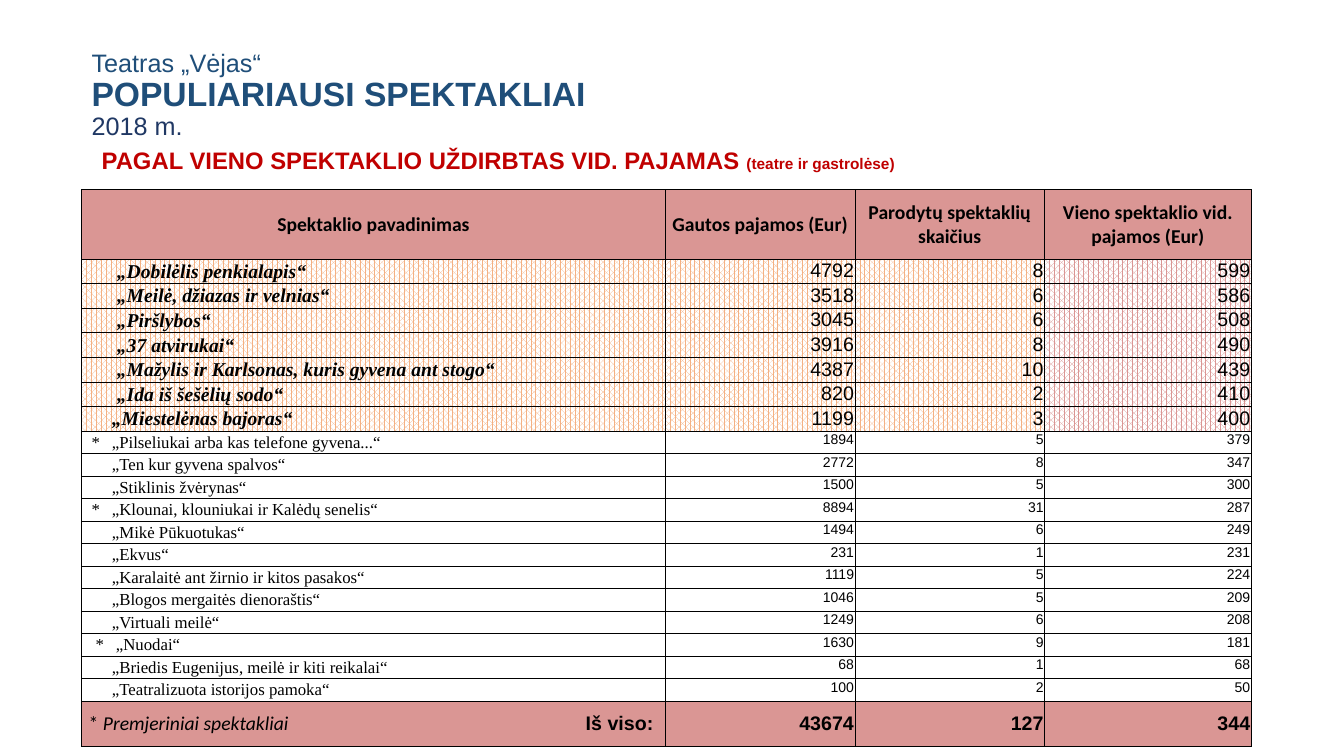
import pptx
import pptx.dml.color
import pptx.enum.dml
import pptx.enum.text
import pptx.oxml
import pptx.oxml.ns
import pptx.util

COLS, ROWS = 1333, 750  # slide grid
UNIT = pptx.util.Inches(0.01)
HUES = {"blue": "1F4E79", "navy": "203864", "red": "C00000", "black": "000000",
        "white": "FFFFFF", "rose": "DA9694", "peach": "F4B183"}
ALIGN = pptx.enum.text.PP_ALIGN
ANCHOR = pptx.enum.text.MSO_ANCHOR

HEADS = ["Spektaklio pavadinimas", "Gautos pajamos (Eur)",
         "Parodytų spektaklių skaičius", "Vieno spektaklio vid. pajamos (Eur)"]
# name, income, shows, income per show
TOP = [
    ("„Dobilėlis penkialapis“", 4792, 8, 599),
    ("„Meilė, džiazas ir velnias“", 3518, 6, 586),
    ("„Piršlybos“", 3045, 6, 508),
    ("„37 atvirukai“", 3916, 8, 490),
    ("„Mažylis ir Karlsonas, kuris gyvena ant stogo“", 4387, 10, 439),
    ("„Ida iš šešėlių sodo“", 820, 2, 410),
    ("„Miestelėnas bajoras“", 1199, 3, 400),
]
REST = [
    ("*\t„Pilseliukai arba kas telefone gyvena...“", 1894, 5, 379),
    ("„Ten kur gyvena spalvos“", 2772, 8, 347),
    ("„Stiklinis žvėrynas“", 1500, 5, 300),
    ("*\t„Klounai, klouniukai ir Kalėdų senelis“", 8894, 31, 287),
    ("„Mikė Pūkuotukas“", 1494, 6, 249),
    ("„Ekvus“", 231, 1, 231),
    ("„Karalaitė ant žirnio ir kitos pasakos“", 1119, 5, 224),
    ("„Blogos mergaitės dienoraštis“", 1046, 5, 209),
    ("„Virtuali meilė“", 1249, 6, 208),
    ("*\t„Nuodai“", 1630, 9, 181),
    ("„Briedis Eugenijus, meilė ir kiti reikalai“", 68, 1, 68),
    ("„Teatralizuota istorijos pamoka“", 100, 2, 50),
]
TOTALS = [43674, 127, 344]
SHIFT = {"„Miestelėnas bajoras“": -5, "*\t„Nuodai“": 4}
WIDTHS = [579, 188, 188, 205]
HEIGHTS = [69] + [23] * len(TOP) + [268 / len(REST)] * len(REST) + [45]


def grid(count):
    return round(count * UNIT)


def color(name):
    return pptx.dml.color.RGBColor.from_string(HUES[name])


def add_run(para, text, size, font="Arial", hue="black", bold=False, slant=False):
    run = para.add_run()
    run.text = text
    face = run.font
    face.size, face.name = pptx.util.Pt(size), font
    face.bold, face.italic = bold, slant
    face.color.rgb = color(hue)


def add_box(slide, left, top, width, height, anchor, space):
    """Add a text box and return its first paragraph."""
    box = slide.shapes.add_textbox(*map(grid, (left, top, width, height)))
    frame = box.text_frame
    frame.word_wrap = True
    frame.vertical_anchor = anchor
    frame.paragraphs[0].line_spacing = space
    return frame.paragraphs[0]


def set_tab(para, place):
    props = para._p.get_or_add_pPr()
    tabs = pptx.oxml.parse_xml(
        f'<a:tabLst {pptx.oxml.ns.nsdecls("a")}>'
        f'<a:tab pos="{grid(place)}" algn="l"/></a:tabLst>')
    props.append(tabs)


def set_edges(cell):
    props = cell._tc.get_or_add_tcPr()
    for spot, side in enumerate("LRTB"):
        props.insert(spot, pptx.oxml.parse_xml(
            f'<a:ln{side} {pptx.oxml.ns.nsdecls("a")} w="6350"><a:solidFill>'
            f'<a:srgbClr val="{HUES["black"]}"/></a:solidFill></a:ln{side}>'))


def set_cell(cell, align, fill=None, dots=False, anchor=ANCHOR.MIDDLE, pad=1):
    """Style a cell and return its paragraph."""
    if dots:
        cell.fill.patterned()
        cell.fill.pattern = pptx.enum.dml.MSO_PATTERN.PERCENT_70
        cell.fill.fore_color.rgb = color(fill)
        cell.fill.back_color.rgb = color("white")
    elif fill:
        cell.fill.solid()
        cell.fill.fore_color.rgb = color(fill)
    else:
        cell.fill.background()
    set_edges(cell)
    cell.margin_left, cell.margin_right = grid(pad), grid(1)
    cell.margin_top, cell.margin_bottom = grid(1), 0
    cell.vertical_anchor = anchor
    para = cell.text_frame.paragraphs[0]
    para.alignment = align
    return para


def add_show(table, row, show, top):
    """Fill the row of one show; top shows are larger and dotted."""
    name, *values = show
    star = name.startswith("*")
    pad = (10 if star else 35 if top else 30) + SHIFT.get(name, 0)
    para = set_cell(table.cell(row, 0), ALIGN.LEFT, "peach" if top else "white",
                    top, pad=pad)
    if star:
        set_tab(para, 20)
    add_run(para, name, 14 if top else 12, "Times New Roman", bold=top, slant=top)
    tints = ["peach", "peach", "rose"] if top else [None] * 3
    for col, (value, tint) in enumerate(zip(values, tints), 1):
        para = set_cell(table.cell(row, col), ALIGN.RIGHT, tint, top, ANCHOR.TOP)
        add_run(para, str(value), 14 if top else 10)


def add_totals(table, row):
    para = set_cell(table.cell(row, 0), ALIGN.LEFT, "rose", pad=7)
    set_tab(para, 493)
    add_run(para, "* ", 14, "Calibri")
    add_run(para, "Premjeriniai spektakliai", 14, "Calibri", slant=True)
    add_run(para, "\tIš viso:", 14, bold=True)
    for col, value in enumerate(TOTALS, 1):
        para = set_cell(table.cell(row, col), ALIGN.RIGHT, "rose")
        add_run(para, str(value), 14, bold=True)


def add_chart_table(slide):
    frame = slide.shapes.add_table(len(HEIGHTS), len(WIDTHS), grid(81), grid(188),
                                   grid(sum(WIDTHS)), grid(sum(HEIGHTS)))
    table = frame.table
    table.horz_banding = table.first_row = False
    for col, width in zip(table.columns, WIDTHS):
        col.width = grid(width)
    for row, height in zip(table.rows, HEIGHTS):
        row.height = grid(height)
    for col, head in enumerate(HEADS):
        para = set_cell(table.cell(0, col), ALIGN.CENTER, "rose")
        add_run(para, head, 14, "Calibri", bold=True)
    for row, show in enumerate(TOP + REST, 1):
        add_show(table, row, show, row <= len(TOP))
    add_totals(table, len(HEIGHTS) - 1)


def main():
    deck = pptx.Presentation()
    deck.slide_width, deck.slide_height = grid(COLS), grid(ROWS)
    slide = deck.slides.add_slide(deck.slide_layouts[6])

    title = add_box(slide, 81, 50, 1169, 95, ANCHOR.BOTTOM, 0.9)
    add_run(title, "Teatras „Vėjas“", 18, hue="blue")
    title.add_line_break()
    add_run(title, "POPULIARIAUSI SPEKTAKLIAI", 24, hue="blue", bold=True)
    title.add_line_break()
    add_run(title, "2018 m.", 18, hue="navy")

    note = add_box(slide, 91, 145, 1150, 55, ANCHOR.TOP, 0.8)
    add_run(note, "PAGAL VIENO SPEKTAKLIO UŽDIRBTAS VID. PAJAMAS ", 17,
            hue="red", bold=True)
    add_run(note, "(teatre ir gastrolėse)", 11, hue="red", bold=True)

    add_chart_table(slide)
    deck.save("out.pptx")


if __name__ == "__main__":
    main()
